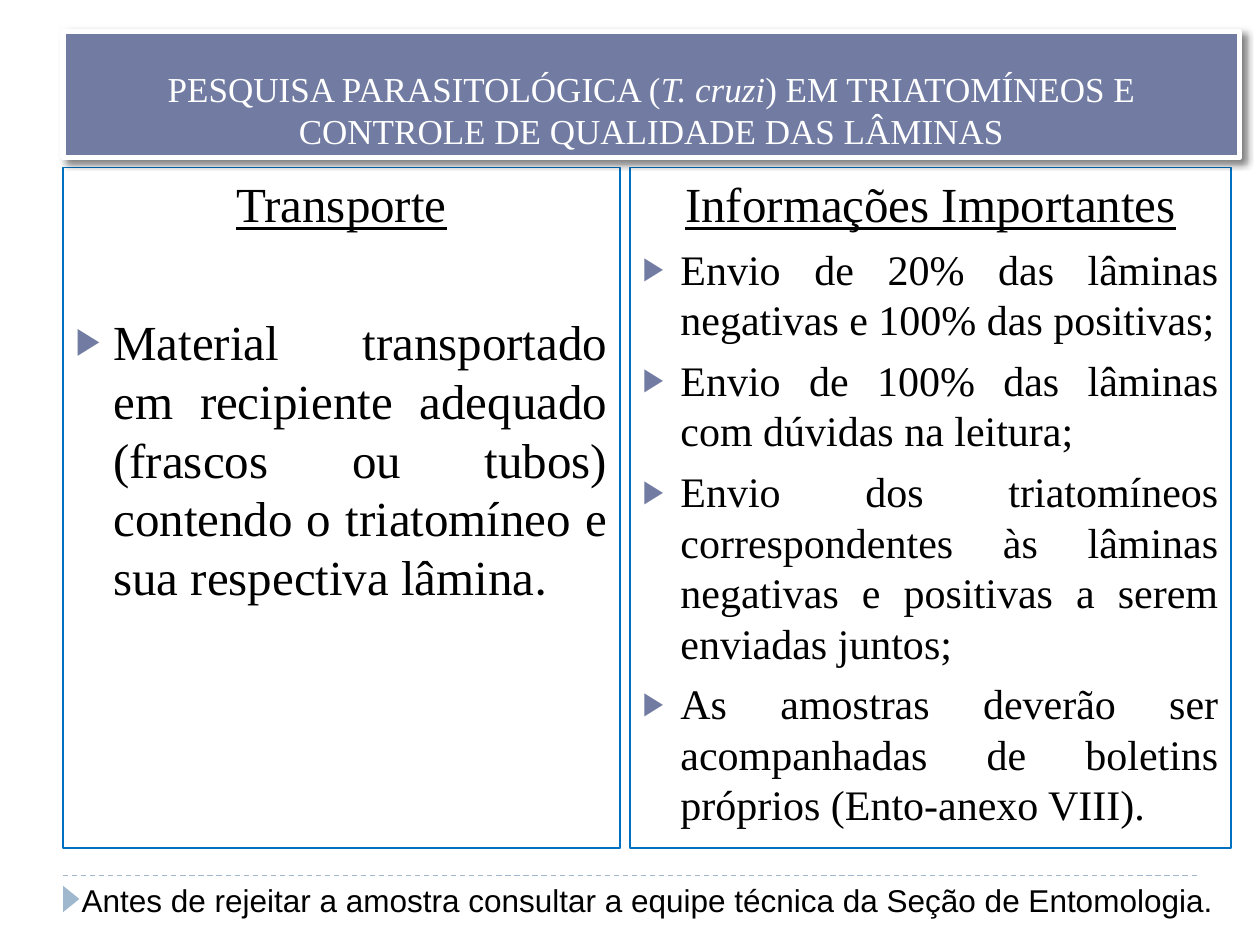
from lxml import etree
from pptx import Presentation
from pptx.dml.color import RGBColor
from pptx.enum.dml import MSO_LINE
from pptx.enum.shapes import MSO_CONNECTOR, MSO_SHAPE
from pptx.enum.text import MSO_ANCHOR, PP_ALIGN
from pptx.oxml.ns import qn
from pptx.util import Inches, Pt

CENTER, JUSTIFY, LEFT = PP_ALIGN.CENTER, PP_ALIGN.JUSTIFY, PP_ALIGN.LEFT
COLORS = {"band": "727CA3", "white": "FFFFFF", "black": "000000",
          "frame": "0070C0", "accent": "9FB8CD"}
SERIF = "Times New Roman"

# Content
TITLE = [("PESQUISA PARASITOLÓGICA (", {}), ("T. cruzi", {"italic": True}),
         (") EM TRIATOMÍNEOS E CONTROLE DE QUALIDADE DAS LÂMINAS", {})]
COLUMNS = [
    {"left": 0.5, "width": 4.42, "heading": "Transporte", "size": 28, "gap": 45,
     "items": [[("Material transportado em recipiente adequado (frascos ou tubos) "
                 "contendo o triatomíneo e sua respectiva lâmina", {}),
                (".", {"font": "Calibri"})]]},
    {"left": 5, "width": 4.77, "heading": "Informações Importantes", "size": 24, "gap": 6,
     "items": ["Envio de 20% das lâminas negativas e 100% das positivas;",
               "Envio de 100% das lâminas com dúvidas na leitura;",
               "Envio dos triatomíneos correspondentes às lâminas negativas e "
               "positivas a serem enviadas juntos;",
               "As amostras deverão ser acompanhadas de boletins próprios "
               "(Ento-anexo VIII)."]},
]
NOTE = "Antes de rejeitar a amostra consultar a equipe técnica da Seção de Entomologia."


def rgb(name):
    return RGBColor.from_string(COLORS[name])


def place(shape, left, top, width, height):
    shape.left, shape.top = Inches(left), Inches(top)
    shape.width, shape.height = Inches(width), Inches(height)


def set_bullet(paragraph, bulleted):
    props = paragraph._p.get_or_add_pPr()
    props.set("marL", str(Inches(0.3)))
    props.set("indent", str(Inches(-0.3)))
    if not bulleted:
        etree.SubElement(props, qn("a:buNone"))
        return
    color = etree.SubElement(props, qn("a:buClr"))
    etree.SubElement(color, qn("a:srgbClr"), val=COLORS["band"])
    etree.SubElement(props, qn("a:buSzPct"), val="76000")
    etree.SubElement(props, qn("a:buFont"), typeface="Arial")
    etree.SubElement(props, qn("a:buChar"), char="▶")


def write(paragraph, text, size, font=SERIF, color="black", align=LEFT,
          before=0, underline=False, bullet=None):
    """Write a string, or a list of (string, run format) pairs."""
    paragraph.alignment = align
    paragraph.space_before = Pt(before)
    if bullet is not None:
        set_bullet(paragraph, bullet)
    for words, style in ([(text, {})] if isinstance(text, str) else text):
        run = paragraph.add_run()
        run.text = words
        run.font.size = Pt(size)
        run.font.name = style.get("font", font)
        run.font.italic = style.get("italic", False)
        run.font.underline = underline
        run.font.color.rgb = rgb(color)


def add_shadow(shape):
    effects = etree.SubElement(shape._element.spPr, qn("a:effectLst"))
    shadow = etree.SubElement(effects, qn("a:outerShdw"), blurRad="50800",
                              dist="38100", dir="2700000", algn="tl")
    color = etree.SubElement(shadow, qn("a:srgbClr"), val=COLORS["black"])
    etree.SubElement(color, qn("a:alpha"), val="50000")


prs = Presentation()
prs.slide_width, prs.slide_height = Inches(10), Inches(7.5)
slide = prs.slides.add_slide(prs.slide_layouts[3])
shapes = slide.shapes

# Dashed rules
for y in (1.25, 6.95):
    rule = shapes.add_connector(MSO_CONNECTOR.STRAIGHT, Inches(0.5), Inches(y),
                                Inches(9.5), Inches(y))
    rule.line.color.rgb = rgb("accent")
    rule.line.width = Pt(0.75)
    rule.line.dash_style = MSO_LINE.DASH
    etree.SubElement(rule._element.spPr, qn("a:effectLst"))

# Footer marker
marker = shapes.add_shape(MSO_SHAPE.ISOSCELES_TRIANGLE, Inches(0.46), Inches(7.07),
                          Inches(0.21), Inches(0.13))
marker.rotation = 90
marker.shadow.inherit = False
marker.fill.solid()
marker.fill.fore_color.rgb = rgb("accent")
marker.line.fill.background()

# Title band, drawn above the rules
title = shapes.title
shapes._spTree.append(title._element)
place(title, 0.5, 0.25, 9.34, 1)
title.fill.solid()
title.fill.fore_color.rgb = rgb("band")
title.line.color.rgb = rgb("white")
title.line.width = Pt(3)
add_shadow(title)
title.text_frame.vertical_anchor = MSO_ANCHOR.BOTTOM
write(title.text_frame.paragraphs[0], TITLE, 20, color="white", align=CENTER)

# Two framed columns
for column, body in zip(COLUMNS, list(slide.placeholders)[1:]):
    place(body, column["left"], 1.33, column["width"], 5.4)
    body.line.color.rgb = rgb("frame")
    body.line.width = Pt(0.75)
    frame = body.text_frame
    write(frame.paragraphs[0], column["heading"], 28, align=CENTER,
          underline=True, bullet=False)
    for item in column["items"]:
        write(frame.add_paragraph(), item, column["size"], align=JUSTIFY,
              before=column["gap"], bullet=True)

# Closing note
note = shapes.add_textbox(Inches(0.55), Inches(6.94), Inches(9.22), Inches(0.4))
note.text_frame.word_wrap = True
write(note.text_frame.paragraphs[0], NOTE, 18, font="Arial")

prs.save("out.pptx")
